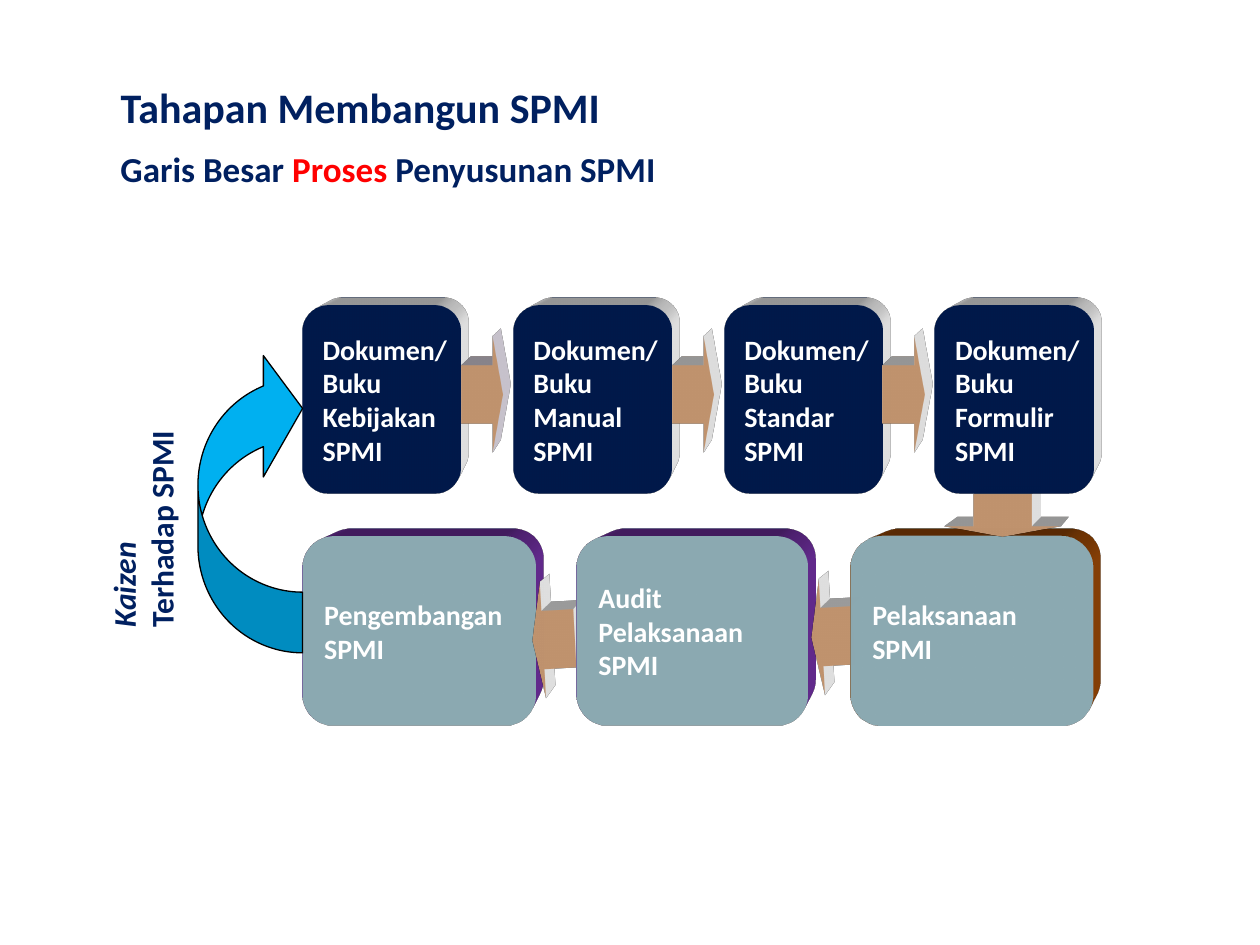
from lxml import etree
from pptx import Presentation
from pptx import util as u
from pptx.dml.color import RGBColor
from pptx.enum import shapes, text
from pptx.oxml.ns import nsdecls, qn

NAVY = RGBColor(0x00, 0x20, 0x60)
PALE_BLUE = RGBColor(0xB7, 0xDE, 0xE8)
SKY = RGBColor(0x00, 0xB0, 0xF0)
PEACH = RGBColor(0xFA, 0xC0, 0x90)
PURPLE = RGBColor(0x70, 0x30, 0xA0)
BROWN = RGBColor(0x98, 0x48, 0x07)
LAVENDER = RGBColor(0xE6, 0xE0, 0xEC)
RED = RGBColor(0xFF, 0x00, 0x00)
WHITE = RGBColor(0xFF, 0xFF, 0xFF)
BLACK = RGBColor(0x00, 0x00, 0x00)
SHAPE = shapes.MSO_SHAPE

presentation = Presentation()
presentation.slide_width, presentation.slide_height = u.Cm(25.4), u.Cm(19.05)
slide = presentation.slides.add_slide(presentation.slide_layouts[5])


def add_solid(kind, left, top, width, height, fill, side):
    """Add a borderless shape extruded towards the top right."""
    shape = slide.shapes.add_shape(
        kind, u.Cm(left), u.Cm(top), u.Cm(width), u.Cm(height))
    shape.shadow.inherit = False
    shape.fill.solid()
    shape.fill.fore_color.rgb = fill
    shape.line.fill.background()
    properties = shape._element.spPr
    properties.append(etree.fromstring(
        f'<a:scene3d {nsdecls("a")}><a:camera prst="legacyPerspectiveTopRight"/>'
        '<a:lightRig rig="legacyFlat3" dir="b"/></a:scene3d>'))
    properties.append(etree.fromstring(
        f'<a:sp3d {nsdecls("a")} extrusionH="430200" prstMaterial="legacyMatte">'
        '<a:bevelT w="13500" h="13500" prst="angle"/>'
        '<a:bevelB w="13500" h="13500" prst="angle"/>'
        f'<a:extrusionClr><a:srgbClr val="{side}"/></a:extrusionClr></a:sp3d>'))
    return shape


def write_lines(shape, lines, size, color):
    """Write bold left-aligned lines, one paragraph each."""
    frame = shape.text_frame
    frame.word_wrap = False
    frame.text = "\n".join(lines)
    for paragraph in frame.paragraphs:
        paragraph.alignment = text.PP_ALIGN.LEFT
        font = paragraph.font
        font.name, font.size, font.bold = "Calibri", u.Pt(size), True
        font.color.rgb = color
    return frame


# Title
title = slide.shapes.title
title.left, title.top, title.width, title.height = (
    u.Cm(2.18), u.Cm(1.52), u.Cm(10.26), u.Cm(1.27))
frame = write_lines(title, ["Tahapan Membangun SPMI"], 24, NAVY)
frame.vertical_anchor = text.MSO_ANCHOR.TOP

# Subtitle with one red word
subtitle = slide.shapes.add_textbox(u.Cm(2.18), u.Cm(2.97), u.Cm(11.4), u.Cm(0.99))
frame = write_lines(subtitle, [""], 20, NAVY)
paragraph = frame.paragraphs[0]
paragraph.line_spacing = 0.85
for words, color in (("Garis Besar ", NAVY), ("Proses ", RED), ("Penyusunan SPMI", NAVY)):
    run = paragraph.add_run()
    run.text = words
    run.font.color.rgb = color

# Lower row: box, then the arrow leading back to it (left, top)
stages = [
    (6.1, 4.7, ["Pengembangan", "SPMI"], PURPLE, (10.74, 11.73)),
    (11.63, 4.65, ["Audit", "Pelaksanaan", "SPMI"], PURPLE, (16.36, 11.66)),
    (17.15, 4.88, ["Pelaksanaan", "SPMI"], BROWN, None),
]
for left, width, lines, side, arrow_at in stages:
    box = add_solid(SHAPE.FLOWCHART_ALTERNATE_PROCESS, left, 10.82, width, 3.81,
                    PALE_BLUE, side)
    write_lines(box, lines, 16, WHITE).vertical_anchor = text.MSO_ANCHOR.MIDDLE
    if arrow_at:
        arrow = add_solid(SHAPE.RIGHT_ARROW, *arrow_at, 0.84, 2.34, PEACH, WHITE)
        arrow.adjustments[1] = 0.25
        arrow.rotation = 177

# Arrow between the rows
arrow = add_solid(SHAPE.RIGHT_ARROW, 19.79, 9.22, 0.84, 2.34, PEACH, WHITE)
arrow.adjustments[1] = 0.25
arrow.rotation = 90

# Upper row: one document per box, evenly spaced
documents = ["Kebijakan", "Manual", "Standar", "Formulir"]
for index, name in enumerate(documents):
    left = 6.1 + 4.25 * index
    box = add_solid(SHAPE.FLOWCHART_ALTERNATE_PROCESS, left, 6.15, 3.19, 3.81, NAVY, WHITE)
    frame = write_lines(box, ["Dokumen/", "Buku", name, "SPMI"], 16, WHITE)
    frame.vertical_anchor = text.MSO_ANCHOR.MIDDLE
    if index < len(documents) - 1:
        arrow = add_solid(SHAPE.RIGHT_ARROW, left + 3.2, 6.78, 0.84, 2.34, PEACH,
                          WHITE if index else LAVENDER)
        arrow.adjustments[1] = 0.25

# Feedback arrow
feedback = slide.shapes.add_shape(
    SHAPE.CURVED_LEFT_ARROW, u.Cm(3.99), u.Cm(7.01), u.Cm(2.11), u.Cm(6.15))
feedback.shadow.inherit = False
feedback.rotation = 180
for index, value in enumerate((0.58, 1.16, 0.375)):
    feedback.adjustments[index] = value
feedback.fill.solid()
feedback.fill.fore_color.rgb = SKY
feedback.line.color.rgb = BLACK
feedback.line.width = u.Pt(0.75)

# Label reading upwards beside the feedback arrow
label = slide.shapes.add_textbox(u.Cm(1.98), u.Cm(8.05), u.Cm(2.06), u.Cm(4.85))
frame = write_lines(label, ["Kaizen", "Terhadap SPMI"], 18, NAVY)
frame.paragraphs[0].font.italic = True
frame._txBody.find(qn("a:bodyPr")).set("vert", "vert270")

presentation.save("out.pptx")
